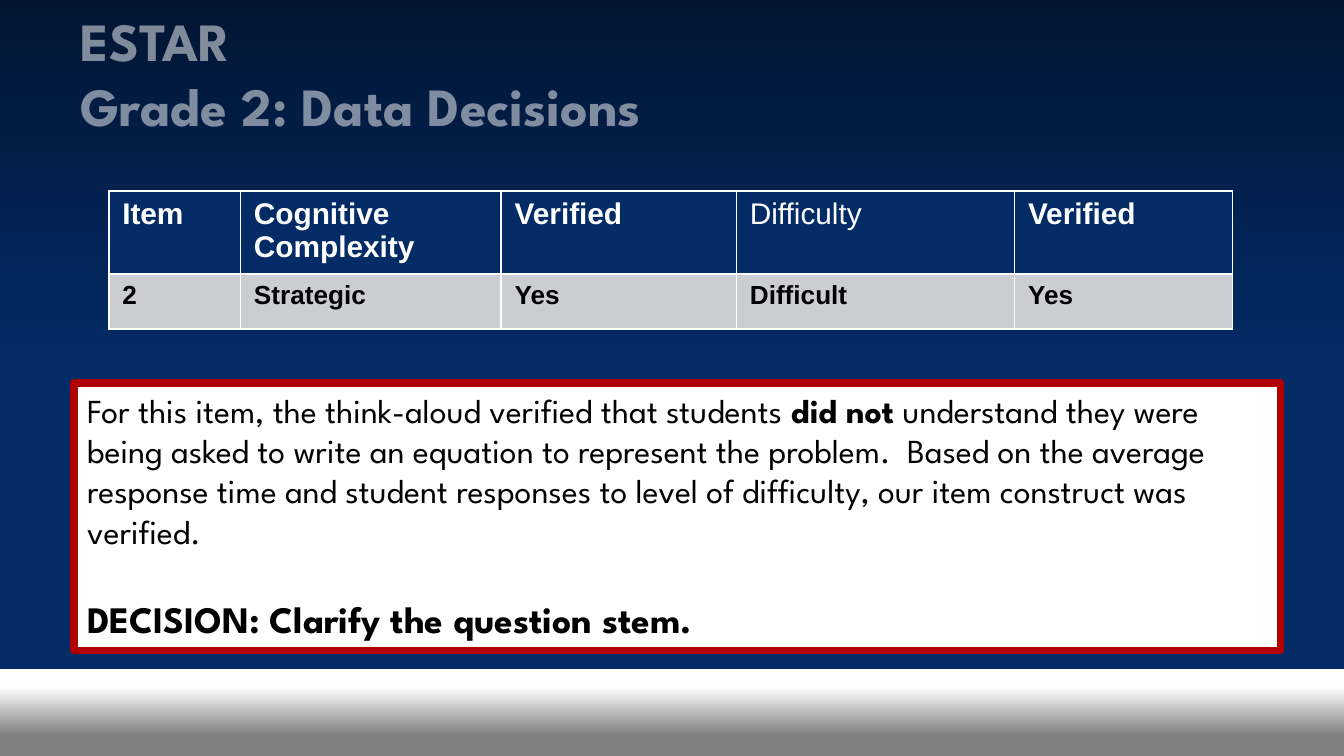
from typing import NamedTuple

from pptx import Presentation
from pptx.dml.color import RGBColor
from pptx.enum.shapes import MSO_SHAPE as Shape
from pptx.enum.text import MSO_ANCHOR as Anchor, PP_ALIGN as Align
from pptx.oxml import parse_xml
from pptx.oxml.ns import nsdecls, qn
from pptx.util import Inches, Pt

SANS, HEAD = "Arial", "League Spartan"
NAVY, WHITE, BLACK, RED = "032B66", "FFFFFF", "000000", "B10000"
WIDE = 10
HIGH = WIDE * 9 / 16


class Box(NamedTuple):
    left: float
    top: float
    width: float
    height: float

    def emu(self) -> list:
        return [Inches(n) for n in self]


class Stop(NamedTuple):
    place: float
    color: str


class Row(NamedTuple):
    height: float
    fill: str
    style: dict
    words: list


def rgb(code: str) -> RGBColor:
    return RGBColor.from_string(code)


def style(font, color: str, **values) -> None:
    font.color.rgb = rgb(color)
    for name, value in values.items():
        setattr(font, name, value)


def blend(fill, angle: float, stops: list[Stop]) -> None:
    """Fill with a linear gradient; the angle runs counter-clockwise."""
    fill.gradient()
    fill.gradient_angle = angle
    for mark, stop in zip(fill.gradient_stops, stops):
        mark.position = stop.place
        mark.color.rgb = rgb(stop.color)


def add_rect(slide, box: Box):
    rect = slide.shapes.add_shape(Shape.RECTANGLE, *box.emu())
    rect.shadow.inherit = False
    return rect


def edge(cell, color: str, width: float) -> None:
    """Draw all four borders of a table cell."""
    props = cell._tc.get_or_add_tcPr()
    for side in "LRTB":
        props.append(parse_xml(
            f'<a:ln{side} {nsdecls("a")} w="{Pt(width)}"><a:solidFill>'
            f'<a:srgbClr val="{color}"/></a:solidFill></a:ln{side}>'))


def add_title(slide, box: Box, lines: list[str]) -> None:
    frame = slide.shapes.add_textbox(*box.emu()).text_frame
    frame.word_wrap = True
    frame.vertical_anchor = Anchor.BOTTOM
    para = frame.paragraphs[0]
    para.text = "\v".join(lines)
    for run in para.runs:
        style(run.font, WHITE, name=HEAD, size=Pt(28.8), bold=True)
        tint = next(run._r.iter(qn("a:srgbClr")))
        tint.append(parse_xml(f'<a:alpha {nsdecls("a")} val="50000"/>'))


def add_grid(slide, box: Box, widths: list[float], rows: list[Row]) -> None:
    grid = slide.shapes.add_table(len(rows), len(widths), *box.emu()).table
    for col, width in zip(grid.columns, widths):
        col.width = Inches(width)
    for line, row in zip(grid.rows, rows):
        line.height = Inches(row.height)
        for cell, word in zip(line.cells, row.words):
            edge(cell, WHITE, 1)
            cell.fill.solid()
            cell.fill.fore_color.rgb = rgb(row.fill)
            cell.text = word
            font = cell.text_frame.paragraphs[0].runs[0].font
            style(font, name=SANS, bold=word != "Difficulty", **row.style)


def add_note(slide, box: Box, paras: list) -> None:
    """Framed note; each paragraph is (size, space before, [(text, bold)])."""
    rect = add_rect(slide, box)
    rect.fill.solid()
    rect.fill.fore_color.rgb = rgb(WHITE)
    rect.line.color.rgb = rgb(RED)
    rect.line.width = Pt(4)
    frame = rect.text_frame
    frame.word_wrap = True
    frame.vertical_anchor = Anchor.TOP
    for i, (size, gap, runs) in enumerate(paras):
        para = frame.add_paragraph() if i else frame.paragraphs[0]
        para.alignment = Align.LEFT
        para.space_before = Pt(gap)
        for text, bold in runs:
            run = para.add_run()
            run.text = text
            style(run.font, BLACK, name=HEAD, size=Pt(size), bold=bold)


def main() -> None:
    deck = Presentation()
    deck.slide_width, deck.slide_height = Inches(WIDE), Inches(HIGH)
    slide = deck.slides.add_slide(deck.slide_layouts[6])
    blend(slide.background.fill, 270, [Stop(0, "021533"), Stop(0.48, NAVY)])

    band = add_rect(slide, Box(0, 4.98, WIDE, 0.65))
    band.line.fill.background()
    blend(band.fill, 90, [Stop(0.25, "808080"), Stop(0.8, WHITE)])

    add_grid(slide, Box(0.81, 1.42, 8.36, 1.03), [0.98, 1.94, 1.75, 2.07, 1.62], [
        Row(0.62, NAVY, {"color": WHITE, "size": Pt(16)},
            ["Item", "Cognitive Complexity", "Verified", "Difficulty", "Verified"]),
        Row(0.41, "CCCDD3", {"color": BLACK, "size": Pt(14)},
            ["2", "Strategic", "Yes", "Difficult", "Yes"]),
    ])
    add_title(slide, Box(0.5, 0.13, 9, 0.94), ["ESTAR", "Grade 2: Data Decisions"])
    add_note(slide, Box(0.55, 2.85, 8.98, 1.99), [
        (18, 0, [
            ("For this item, the think-aloud verified that students ", False),
            ("did not", True),
            (" understand they were being asked to write an equation to represent "
             "the problem.  Based on the average response time and student responses "
             "to level of difficulty, our item construct was verified.", False),
        ]),
        (20, 24, [("DECISION: Clarify the question stem.", True)]),
    ])
    deck.save("out.pptx")


if __name__ == "__main__":
    main()
